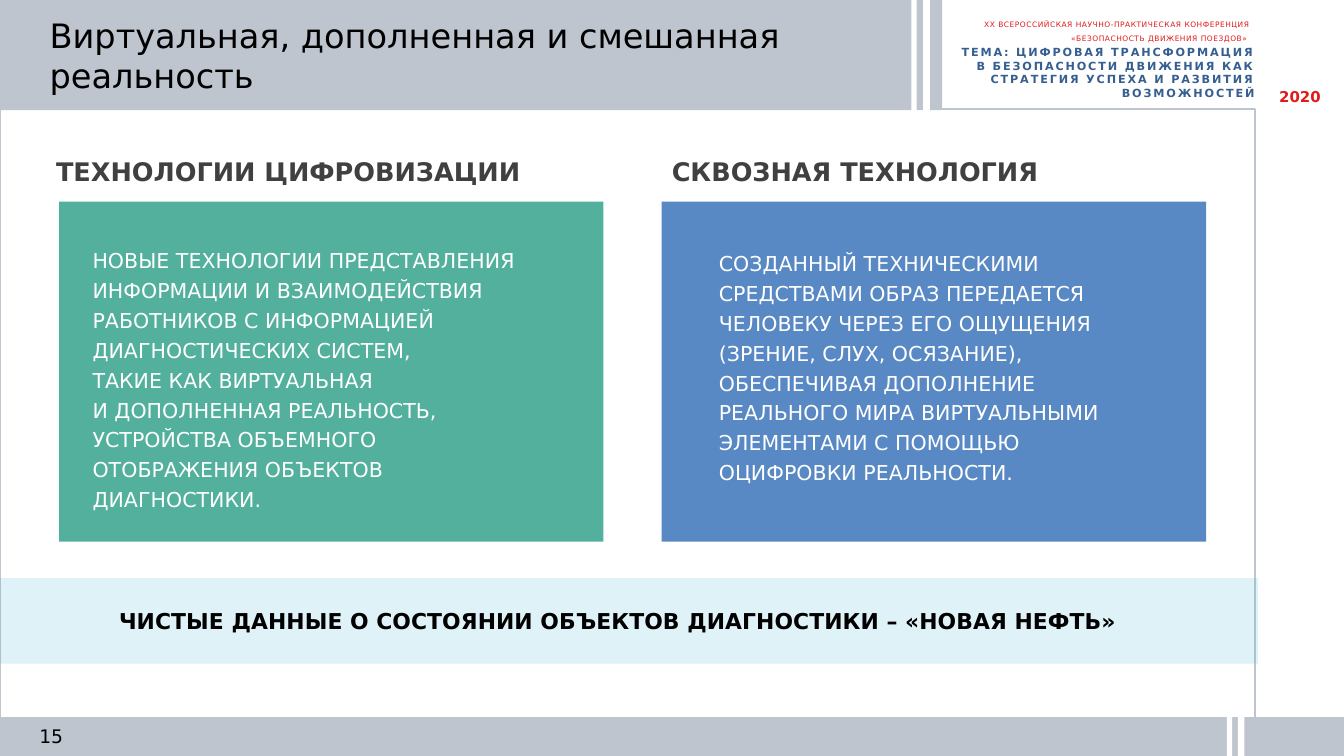
from pptx import Presentation
from pptx.dml.color import RGBColor
from pptx.enum.shapes import MSO_SHAPE
from pptx.enum.text import MSO_ANCHOR, MSO_AUTO_SIZE, PP_ALIGN
from pptx.oxml.ns import qn
from pptx.util import Pt
from lxml.etree import SubElement

FONT = "DejaVu Sans"
GREY, WHITE, BLACK, RED = "BFC5CE", "FFFFFF", "000000", "E21A1A"
TITLE = "Виртуальная, дополненная и смешанная реальность"
CONFERENCE = "XX ВСЕРОССИЙСКАЯ НАУЧНО-ПРАКТИЧЕСКАЯ КОНФЕРЕНЦИЯ «БЕЗОПАСНОСТЬ ДВИЖЕНИЯ ПОЕЗДОВ» "
THEME = ("ТЕМА: ЦИФРОВАЯ ТРАНСФОРМАЦИЯ\nВ БЕЗОПАСНОСТИ ДВИЖЕНИЯ КАК "
         "СТРАТЕГИЯ УСПЕХА И РАЗВИТИЯ ВОЗМОЖНОСТЕЙ")
CONCLUSION = "ЧИСТЫЕ ДАННЫЕ О СОСТОЯНИИ ОБЪЕКТОВ ДИАГНОСТИКИ – «НОВАЯ НЕФТЬ»"
CARDS = [
    dict(left=31.7, fill="53B09D", heading="ТЕХНОЛОГИИ ЦИФРОВИЗАЦИИ",
         heading_box=(23, 82, 321, 41), body_box=(42.5, 126.7, 258.5, 137),
         body="НОВЫЕ ТЕХНОЛОГИИ ПРЕДСТАВЛЕНИЯ ИНФОРМАЦИИ И ВЗАИМОДЕЙСТВИЯ "
              "РАБОТНИКОВ С ИНФОРМАЦИЕЙ ДИАГНОСТИЧЕСКИХ СИСТЕМ,\n"
              "ТАКИЕ КАК ВИРТУАЛЬНАЯ\nИ ДОПОЛНЕННАЯ РЕАЛЬНОСТЬ, УСТРОЙСТВА "
              "ОБЪЕМНОГО ОТОБРАЖЕНИЯ ОБЪЕКТОВ ДИАГНОСТИКИ."),
    dict(left=354.5, fill="5889C4", heading="СКВОЗНАЯ ТЕХНОЛОГИЯ",
         heading_box=(352.8, 82, 264, 27), body_box=(378, 128.2, 245.5, 135),
         body="СОЗДАННЫЙ ТЕХНИЧЕСКИМИ СРЕДСТВАМИ ОБРАЗ ПЕРЕДАЕТСЯ ЧЕЛОВЕКУ "
              "ЧЕРЕЗ ЕГО ОЩУЩЕНИЯ (ЗРЕНИЕ, СЛУХ, ОСЯЗАНИЕ), ОБЕСПЕЧИВАЯ "
              "ДОПОЛНЕНИЕ РЕАЛЬНОГО МИРА ВИРТУАЛЬНЫМИ ЭЛЕМЕНТАМИ С ПОМОЩЬЮ "
              "ОЦИФРОВКИ РЕАЛЬНОСТИ."),
]
CARD_TOP, CARD_W, CARD_H = 108, 291.6, 182.2
STRIPES = [(488.2, -0.7, 2.9, 60.2), (494.6, -0.7, 3.6, 60.2),
           (657.3, 381.6, 2.9, 25.2), (663.1, 381.6, 3.6, 25.2)]


def rgb(hex_color):
    return RGBColor.from_string(hex_color)


def add_rect(box, fill=None, line=None, alpha=None):
    sp = s.shapes.add_shape(MSO_SHAPE.RECTANGLE, *map(Pt, box))
    sp.shadow.inherit = False
    if fill:
        sp.fill.solid()
        sp.fill.fore_color.rgb = rgb(fill)
    else:
        sp.fill.background()
    if line:
        sp.line.color.rgb = rgb(line)
        sp.line.width = Pt(1)
    else:
        sp.line.fill.background()
    if alpha:
        color = sp.fill._xPr.find(qn("a:solidFill"))[0]
        SubElement(color, qn("a:alpha"), val=str(alpha * 1000))
    return sp


def write(sp, text, size, color, bold=False, align=PP_ALIGN.LEFT,
          line=None, spacing=None, anchor=MSO_ANCHOR.TOP):
    tf = sp.text_frame
    tf.word_wrap = True
    tf.auto_size = MSO_AUTO_SIZE.NONE
    tf.vertical_anchor = anchor
    p = tf.paragraphs[0]
    p.text = text.replace("\n", "\v")
    p.alignment = align
    p.line_spacing = line
    p.font.name, p.font.size, p.font.bold = FONT, Pt(size), bold
    p.font.color.rgb = rgb(color)
    if spacing:
        for r in p.runs:
            r.font._element.set("spc", str(spacing))


def add_text(box, *args, **kwargs):
    sp = s.shapes.add_textbox(*map(Pt, box))
    write(sp, *args, **kwargs)
    return sp


prs = Presentation()
prs.slide_width, prs.slide_height = Pt(720), Pt(405)
s = prs.slides.add_slide(prs.slide_layouts[5])

add_rect((0, 58.4, 672.4, 345.6), line=GREY)
add_rect((0, 0, 504.7, 59), GREY)
add_rect((0, 384.2, 720, 20.8), GREY)
number = add_text((15.8, 388.4, 18, 12), "15", 10, BLACK, align=PP_ALIGN.RIGHT,
                  anchor=MSO_ANCHOR.MIDDLE)
tf = number.text_frame
tf.margin_left = tf.margin_right = tf.margin_top = tf.margin_bottom = 0
add_text((501.8, 20.9, 177.3, 28.8), THEME, 6, "365F91", bold=True,
         align=PP_ALIGN.RIGHT, line=Pt(7.2), spacing=100)
add_text((678.2, 43.2, 49.7, 17.3), "2020", 8, RED, bold=True)
for stripe in STRIPES:
    add_rect(stripe, WHITE)
add_text((505.4, 5, 171.4, 20.2), CONFERENCE, 4, RED,
         align=PP_ALIGN.RIGHT, line=Pt(7.2), spacing=30)

add_rect((0, 309.8, 673.9, 45.8), "3EB4D4", alpha=17)
title = s.shapes.title
s.shapes._spTree.append(title._element)
title.left, title.top, title.width, title.height = map(Pt, (19.4, 4.3, 437.8, 51.1))
write(title, TITLE, 18, BLACK)

for card in CARDS:
    add_text(card["heading_box"], card["heading"], 13.7, "404040", bold=True, line=0.9)
    add_rect((card["left"], CARD_TOP, CARD_W, CARD_H), card["fill"])
    add_text(card["body_box"], card["body"], 11, WHITE, line=Pt(16))

add_text((-22.3, 320.4, 706.3, 26.6), CONCLUSION, 11.7, BLACK, bold=True,
         align=PP_ALIGN.CENTER, line=1.1)

prs.save("out.pptx")
